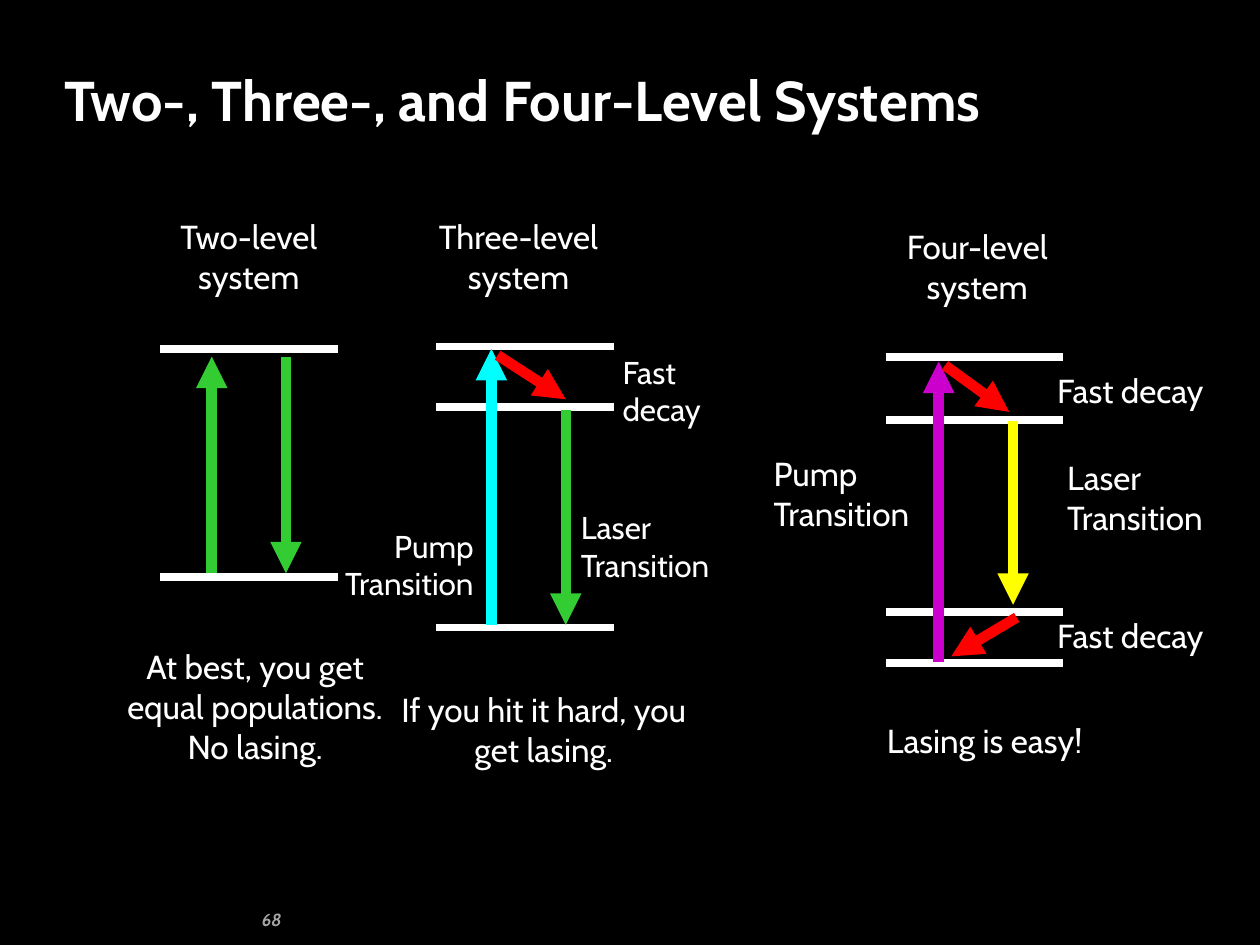
from dataclasses import dataclass

from pptx import Presentation
from pptx.dml.color import RGBColor as RGB
from pptx.enum.shapes import MSO_CONNECTOR as CONN
from pptx.enum.text import MSO_ANCHOR as ANCHOR, PP_ALIGN as ALIGN
from pptx.oxml.ns import qn
from pptx.util import Pt
from lxml import etree


@dataclass(frozen=True)
class Theme:
    font: str = "Cabin"
    back: str = "000000"
    text: str = "FFFFFF"
    muted: str = "A6A6A6"
    green: str = "33CC33"
    cyan: str = "00FFFF"
    red: str = "FF0000"
    purple: str = "CC00CC"
    yellow: str = "FFFF00"
    title: int = 32
    body: int = 19
    small: int = 18
    number: int = 10
    level_line: float = 4.5
    arrow_line: float = 6


T = Theme()
C, L, R = ALIGN.CENTER, ALIGN.LEFT, ALIGN.RIGHT

prs = Presentation()
prs.slide_width, prs.slide_height = Pt(720), Pt(540)
s = prs.slides.add_slide(prs.slide_layouts[6])
s.background.fill.solid()
s.background.fill.fore_color.rgb = RGB.from_string(T.back)


def add_text(text, x, y, w, h, size=T.body, color=T.text, align=L, bold=False,
             italic=False, wrap=True, inset=7.9, anchor=ANCHOR.TOP):
    tf = s.shapes.add_textbox(Pt(x), Pt(y), Pt(w), Pt(h)).text_frame
    tf.word_wrap, tf.vertical_anchor = wrap, anchor
    tf.margin_left = tf.margin_right = Pt(inset)
    tf.margin_top = tf.margin_bottom = Pt(3.6)
    p = tf.paragraphs[0]
    p.alignment = align
    r = p.add_run()
    r.text = text
    r.font.name, r.font.size = T.font, Pt(size)
    r.font.bold, r.font.italic = bold, italic
    r.font.color.rgb = RGB.from_string(color)


def add_line(x1, y1, x2, y2, color=T.text, width=T.level_line, arrow=False):
    line = s.shapes.add_connector(CONN.STRAIGHT, Pt(x1), Pt(y1), Pt(x2), Pt(y2))
    line.line.color.rgb = RGB.from_string(color)
    line.line.width = Pt(width)
    sp_pr = line._element.spPr
    if arrow:
        etree.SubElement(sp_pr.find(qn("a:ln")), qn("a:tailEnd"), type="triangle")
    etree.SubElement(sp_pr, qn("a:effectLst"))


# Title and slide number
add_text("Two-, Three-, and Four-Level Systems", 30.2, 33.8, 666, 45.4,
         size=T.title, bold=True, inset=6.5)
add_text("68", 142.6, 515.5, 321.8, 19.4, size=T.number, color=T.muted,
         bold=True, italic=True, inset=7.2, anchor=ANCHOR.MIDDLE)

# Energy levels: left edge and heights of each system
level_width = 101.5
systems = [
    (91.4, [199.4, 329.8]),
    (249.1, [198, 232.6, 358.6]),
    (506.2, [203.8, 239.8, 349.9, 378.7]),
]
for left, levels in systems:
    for y in levels:
        add_line(left, y, left + level_width, y)

# Transitions: start, end, colour
transitions = [
    (121, 327.6, 121, 203.8, T.green),
    (163.4, 203.8, 163.4, 327.6, T.green),
    (280.8, 357.1, 280.8, 199.4, T.cyan),
    (323.3, 234, 323.3, 357.1, T.green),
    (284.4, 203, 323.3, 228.2, T.red),
    (536.4, 378, 536.4, 206.6, T.purple),
    (540, 208.8, 576.7, 235.4, T.red),
    (578.9, 240.5, 578.9, 345.6, T.yellow),
    (581, 352.8, 543.6, 375.1, T.red),
]
for x1, y1, x2, y2, color in transitions:
    add_line(x1, y1, x2, y2, color, T.arrow_line, arrow=True)

# System names
for name, x, y in [("Two-level system", 72, 120.2),
                   ("Three-level system", 226.1, 120.2),
                   ("Four-level system", 488.2, 126)]:
    add_text(name, x, y, 140.4, 54, align=C)

# Conclusions
for text, x, y, h in [
        ("At best, you get equal populations. No lasing.", 53.3, 365.8, 77),
        ("If you hit it hard, you get lasing.", 218.2, 390.2, 54),
        ("Lasing is easy!", 470.2, 408.2, 31)]:
    add_text(text, x, y, 185, h, align=C)

# Transition labels
for text, x, y, w, size, align in [
        ("Pump Transition", 180, 297.4, 98.6, T.small, R),
        ("Laser Transition", 324, 286.6, 97.2, T.small, L),
        ("Pump Transition", 434.2, 255.6, 108.7, T.body, L),
        ("Laser Transition", 601.9, 257.8, 118, T.body, L)]:
    add_text(text, x, y, w, 54, size=size, align=align)

# Decay labels
for x, y, w, size in [(347.8, 198, 95, T.small),
                      (596.2, 208.1, 99.4, T.body),
                      (596.2, 347.8, 99.4, T.body)]:
    add_text("Fast decay", x, y, w, 31, size=size, wrap=False)

prs.save("out.pptx")
